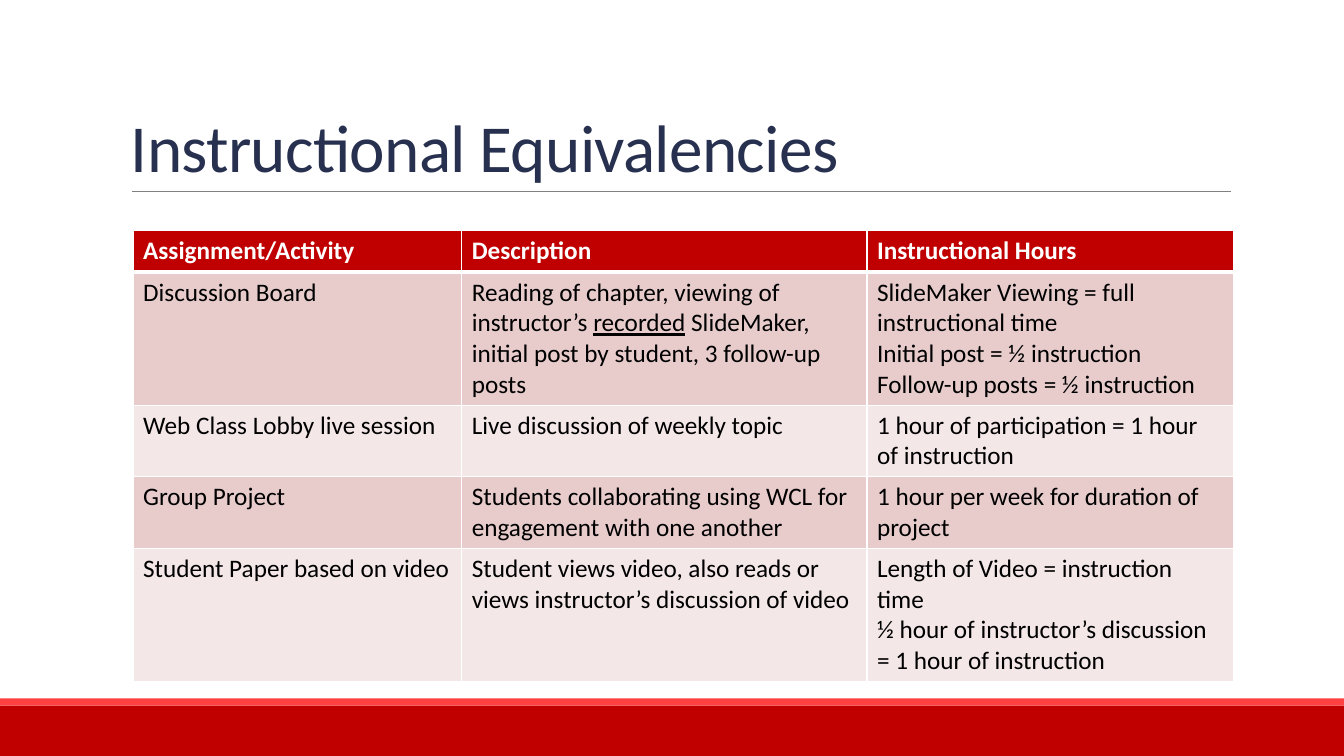
from lxml import etree
from pptx import Presentation
from pptx.dml.color import RGBColor
from pptx.enum.shapes import MSO_CONNECTOR as Connector, MSO_SHAPE as Shape
from pptx.enum.text import MSO_ANCHOR as Anchor
from pptx.oxml.ns import qn
from pptx.util import Inches, Pt

FONT = "Calibri"
RED = "C00000"
BANDS = ["F4E7E7", "E8CCCC"]
COLUMN_WIDTHS = [3.26, 4.02, 3.64]
ROW_HEIGHTS = [0.41, 1.32, 0.71, 0.71, 1.32]
UNDERLINED = "recorded"
ROWS = [
    ["Assignment/Activity", "Description", "Instructional Hours"],
    ["Discussion Board",
     "Reading of chapter, viewing of instructor’s recorded SlideMaker, "
     "initial post by student, 3 follow-up posts",
     "SlideMaker Viewing = full instructional time\n"
     "Initial post = ½ instruction\nFollow-up posts = ½ instruction"],
    ["Web Class Lobby live session", "Live discussion of weekly topic",
     "1 hour of participation = 1 hour of instruction"],
    ["Group Project",
     "Students collaborating using WCL for engagement with one another",
     "1 hour per week for duration of project"],
    ["Student Paper based on video",
     "Student views video, also reads or views instructor’s discussion of video",
     "Length of Video = instruction time\n"
     "½ hour of instructor’s discussion = 1 hour of instruction"],
]


def color(value):
    return RGBColor.from_string(value)


def add_border(cell, side, width):
    """Draw a white line on one side (L, R, T or B) of a table cell."""
    line = etree.SubElement(cell._tc.get_or_add_tcPr(), qn(f"a:ln{side}"), w=str(Pt(width)))
    fill = etree.SubElement(line, qn("a:solidFill"))
    etree.SubElement(fill, qn("a:srgbClr"), val="FFFFFF")


presentation = Presentation()
presentation.slide_width = Inches(13.33)
presentation.slide_height = Inches(7.5)
slide = presentation.slides.add_slide(presentation.slide_layouts[6])

# Footer bands
for top, height, fill in [(7, 0.5, RED), (6.93, 0.07, "FF4040")]:
    band = slide.shapes.add_shape(
        Shape.RECTANGLE, 0, Inches(top), Inches(13.33), Inches(height))
    band.shadow.inherit = False
    band.fill.solid()
    band.fill.fore_color.rgb = color(fill)
    band.line.fill.background()

# Title and its rule
rule = slide.shapes.add_connector(
    Connector.STRAIGHT, Inches(1.31), Inches(1.9), Inches(12.21), Inches(1.9))
rule.line.color.rgb = color("808080")
rule.line.width = Pt(0.5)
etree.SubElement(rule._element.spPr, qn("a:effectLst"))

title = slide.shapes.add_textbox(Inches(1.2), Inches(0.31), Inches(11), Inches(1.59))
title.text_frame.word_wrap = True
title.text_frame.vertical_anchor = Anchor.BOTTOM
title.text_frame.text = "Instructional Equivalencies"
paragraph = title.text_frame.paragraphs[0]
paragraph.line_spacing = 0.85
run = paragraph.runs[0]
run.font.name = FONT
run.font.size = Pt(48)
run.font.color.rgb = color("27304E")
run._r.get_or_add_rPr().set("spc", "-50")

# Equivalencies table
table = slide.shapes.add_table(
    len(ROWS), len(COLUMN_WIDTHS), Inches(1.32), Inches(2.29),
    Inches(sum(COLUMN_WIDTHS)), Inches(sum(ROW_HEIGHTS))).table
for column, width in zip(table.columns, COLUMN_WIDTHS):
    column.width = Inches(width)
for row, height in zip(table.rows, ROW_HEIGHTS):
    row.height = Inches(height)

for row_index, texts in enumerate(ROWS):
    is_header = row_index == 0
    for column_index, text in enumerate(texts):
        cell = table.cell(row_index, column_index)
        for side in "LRTB":
            thick = (is_header and side == "B") or (row_index == 1 and side == "T")
            add_border(cell, side, 3 if thick else 1)
        cell.fill.solid()
        cell.fill.fore_color.rgb = color(RED if is_header else BANDS[row_index % 2])
        cell.text_frame.text = text
        for paragraph in cell.text_frame.paragraphs:
            before, word, after = paragraph.text.partition(UNDERLINED)
            if word:
                paragraph.text = before
                paragraph.add_run().text = word
                paragraph.add_run().text = after
            for run in paragraph.runs:
                run.font.name = FONT
                run.font.size = Pt(18)
                run.font.bold = is_header
                run.font.underline = run.text == UNDERLINED
                run.font.color.rgb = color("FFFFFF" if is_header else "000000")

presentation.save("out.pptx")
